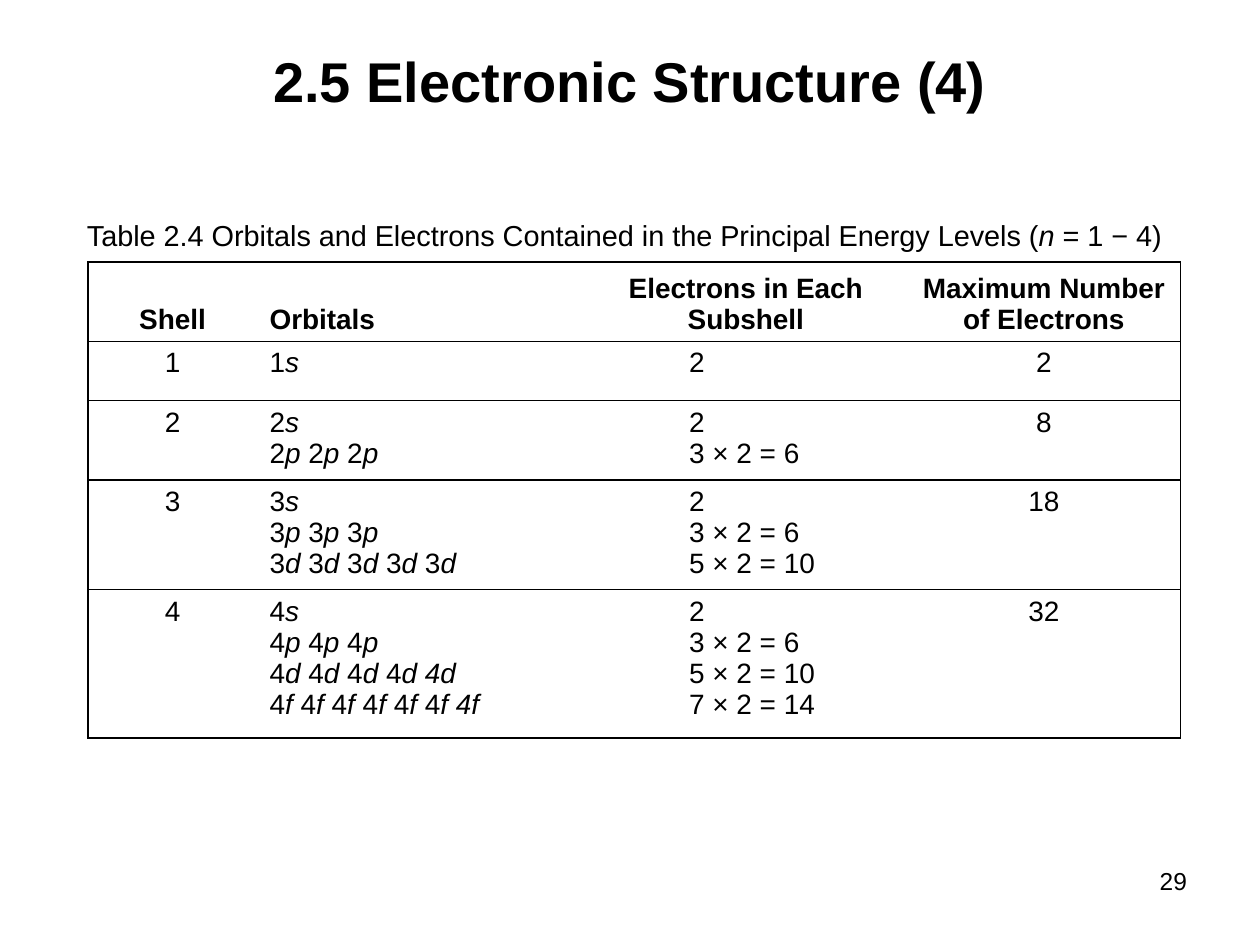
from lxml import etree
from pptx import Presentation
from pptx.dml.color import RGBColor
from pptx.enum.text import MSO_ANCHOR, MSO_AUTO_SIZE, PP_ALIGN
from pptx.oxml.ns import qn
from pptx.util import Inches, Pt

BLACK = RGBColor(0, 0, 0)
FONT = "Arial"
LEFT, CENTER, RIGHT = PP_ALIGN.LEFT, PP_ALIGN.CENTER, PP_ALIGN.RIGHT
TOP, MIDDLE, BOTTOM = MSO_ANCHOR.TOP, MSO_ANCHOR.MIDDLE, MSO_ANCHOR.BOTTOM

HEADERS = ["Shell", "Orbitals", "Electrons in Each Subshell", "Maximum Number of Electrons"]
COLUMN_WIDTHS = [1.34, 2.6, 2.56, 2.17]
ROW_HEIGHTS = [0.63, 0.47, 0.63, 0.87, 1.18]
COLUMN_ALIGNMENTS = [CENTER, LEFT, LEFT, CENTER]
HEADER_ALIGNMENTS = [CENTER, LEFT, CENTER, CENTER]
SUBSHELLS = "spdf"
SUBSHELL_INDENT = 0.83


def place(shape, left, top, width, height):
    shape.left, shape.top = Inches(left), Inches(top)
    shape.width, shape.height = Inches(width), Inches(height)


def write_lines(text_frame, lines, size, alignment=LEFT, bold=False):
    """Write one paragraph per line; asterisks switch italics on and off."""
    for number, line in enumerate(lines):
        paragraph = text_frame.add_paragraph() if number else text_frame.paragraphs[0]
        paragraph.alignment = alignment
        for part, text in enumerate(line.split("*")):
            if not text:
                continue
            run = paragraph.add_run()
            run.text = text
            run.font.color.rgb = BLACK
            font_format = {"name": FONT, "size": Pt(size), "bold": bold, "italic": part % 2 == 1}
            for name, value in font_format.items():
                setattr(run.font, name, value)


def format_frame(text_frame, anchor):
    frame_format = {"word_wrap": True, "auto_size": MSO_AUTO_SIZE.NONE, "vertical_anchor": anchor}
    for name, value in frame_format.items():
        setattr(text_frame, name, value)


def add_title(slide, text):
    title = slide.shapes.title
    place(title, 0.5, 0.38, 9, 0.51)
    format_frame(title.text_frame, MIDDLE)
    write_lines(title.text_frame, [text], 32, CENTER, bold=True)


def add_caption(slide, text):
    caption = slide.placeholders[1]
    place(caption, 0.59, 1.68, 8.94, 0.4)
    format_frame(caption.text_frame, TOP)
    write_lines(caption.text_frame, [text], 16.5)
    paragraph = caption.text_frame.paragraphs[0]
    paragraph.space_before = Pt(3.3)
    properties = paragraph._p.get_or_add_pPr()
    properties.set("marL", "0")
    properties.set("indent", "0")
    etree.SubElement(properties, qn("a:buNone"))


def add_page_number(slide, text):
    box = slide.shapes.add_textbox(Inches(8.01), Inches(6.82), Inches(1.51), Inches(0.34))
    format_frame(box.text_frame, MIDDLE)
    write_lines(box.text_frame, [text], 14, RIGHT)


def set_borders(cell, visible_sides):
    properties = cell._tc.get_or_add_tcPr()
    for side in "LRTB":
        line = etree.SubElement(properties, qn(f"a:ln{side}"), w=str(Pt(1)))
        if side in visible_sides:
            fill = etree.SubElement(line, qn("a:solidFill"))
            etree.SubElement(fill, qn("a:srgbClr"), val=str(BLACK))
        else:
            etree.SubElement(line, qn("a:noFill"))


def orbital_line(shell, level):
    orbital = f"{shell}*{SUBSHELLS[level]}*"
    orbitals = [orbital] * (2 * level + 1)
    if shell == 4 and level >= 2:
        orbitals[-1] = f"*{shell}{SUBSHELLS[level]}*"
    return " ".join(orbitals)


def electron_line(level):
    count = 2 * level + 1
    return f"{count} × 2 = {2 * count}" if level else "2"


def shell_row(shell):
    """Return the lines of each cell in the row of a shell."""
    levels = range(shell)
    return [
        [str(shell)],
        [orbital_line(shell, level) for level in levels],
        [electron_line(level) for level in levels],
        [str(2 * shell ** 2)],
    ]


def add_orbital_table(slide):
    rows = [[[header] for header in HEADERS]] + [shell_row(shell) for shell in range(1, 5)]
    table = slide.shapes.add_table(
        len(rows), len(HEADERS), Inches(0.7), Inches(2.08),
        Inches(sum(COLUMN_WIDTHS)), Inches(sum(ROW_HEIGHTS))).table
    table.first_row = table.horz_banding = False
    for column, width in zip(table.columns, COLUMN_WIDTHS):
        column.width = Inches(width)
    for row, height in zip(table.rows, ROW_HEIGHTS):
        row.height = Inches(height)

    outer_sides = {0: "L", len(HEADERS) - 1: "R"}
    for row_index, row in enumerate(rows):
        is_header = row_index == 0
        alignments = HEADER_ALIGNMENTS if is_header else COLUMN_ALIGNMENTS
        for column_index, lines in enumerate(row):
            cell = table.cell(row_index, column_index)
            set_borders(cell, "TB" + outer_sides.get(column_index, ""))
            cell.fill.background()
            cell.vertical_anchor = BOTTOM if is_header else TOP
            if column_index == 2 and not is_header:
                cell.margin_left = Inches(SUBSHELL_INDENT)
            write_lines(cell.text_frame, lines, 16, alignments[column_index], bold=is_header)


def main():
    presentation = Presentation()
    presentation.slide_width, presentation.slide_height = Inches(10), Inches(7.5)
    slide = presentation.slides.add_slide(presentation.slide_layouts[1])
    add_page_number(slide, "29")
    add_title(slide, "2.5 Electronic Structure (4)")
    add_caption(slide, "Table 2.4 Orbitals and Electrons Contained in the "
                       "Principal Energy Levels (*n* = 1 − 4)")
    add_orbital_table(slide)
    presentation.save("out.pptx")


if __name__ == "__main__":
    main()
